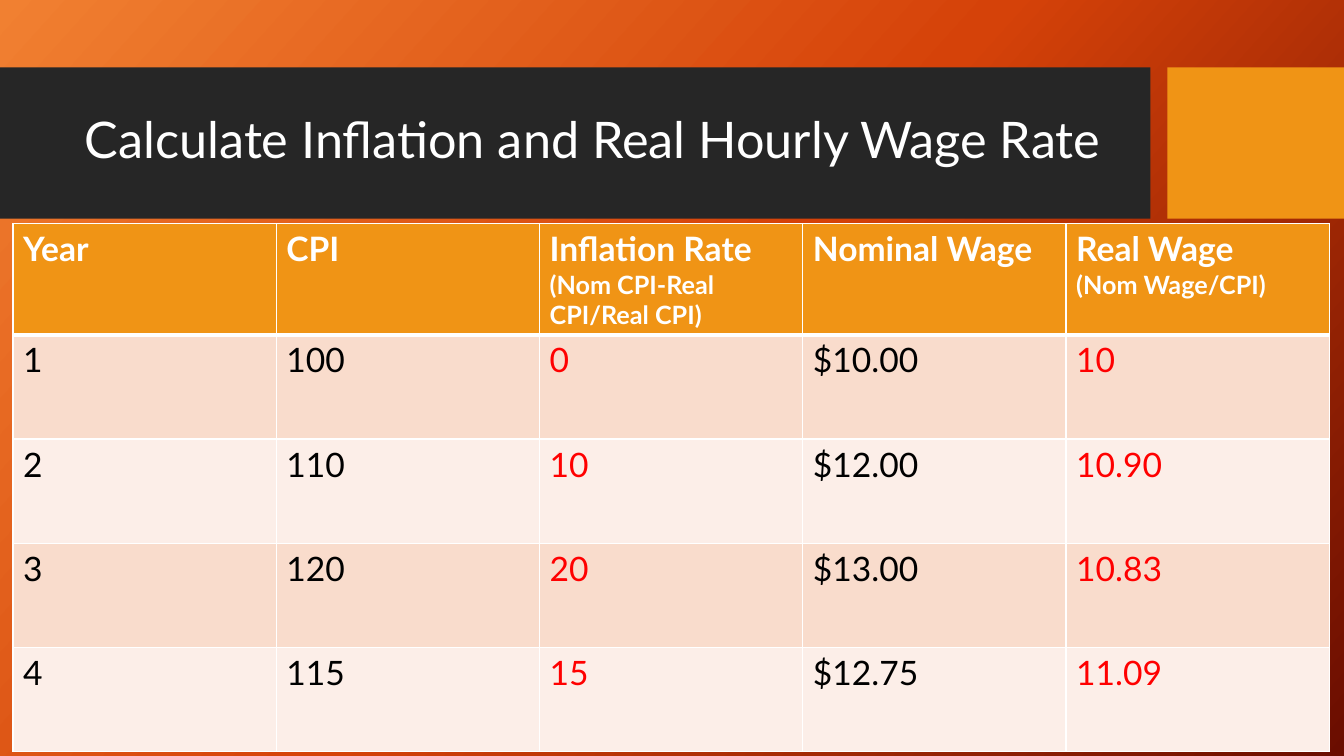
from copy import deepcopy

from lxml import etree
from pptx import Presentation
from pptx import util as u
from pptx.dml.color import RGBColor
from pptx.enum import shapes, text
from pptx.oxml import ns

COLORS = {
    "glow": "F18031", "flame": "D54209", "ember": "6A0D00",
    "banner": "262626", "accent": "F09415", "white": "FFFFFF",
    "black": "000000", "answer": "FF0000", "band": "F9DCCC", "pale": "FCEEE8",
}
HEADERS = [
    [[("Year", 24)]],
    [[("CPI", 24)]],
    [[("Inflation Rate ", 24), ("(Nom CPI-Real CPI/Real CPI)", 18)]],
    [[("Nominal Wage", 24)]],
    [[("Real Wage", 24)], [("(Nom Wage/CPI)", 18)]],
]
WAGES = [
    ["1", "100", "0", "$10.00", "10"],
    ["2", "110", "10", "$12.00", "10.90"],
    ["3", "120", "20", "$13.00", "10.83"],
    ["4", "115", "15", "$12.75", "11.09"],
]
ANSWER_COLUMNS = (2, 4)


def color(name):
    """Return the named colour."""
    return RGBColor.from_string(COLORS[name])


def write_text(frame, paragraphs, fill="black", bold=False, spacing=1.0):
    """Write paragraphs given as lists of (text, size) runs."""
    frame.word_wrap = True
    for index, runs in enumerate(paragraphs):
        paragraph = frame.add_paragraph() if index else frame.paragraphs[0]
        paragraph.alignment = text.PP_ALIGN.LEFT
        paragraph.line_spacing = spacing
        for words, size in runs:
            run = paragraph.add_run()
            run.text = words
            run.font.name = "Lato"
            run.font.size = u.Pt(size)
            run.font.bold = bold
            run.font.color.rgb = color(fill)


def paint_background(slide):
    """Fill the slide with a three-stop diagonal gradient."""
    fill = slide.background.fill
    fill.gradient()
    fill.gradient_angle = 360 - 42
    stop_list = slide.element.find(".//" + ns.qn("a:gsLst"))
    stop_list.append(deepcopy(stop_list[-1]))
    for stop, name, position in zip(fill.gradient_stops, ("glow", "flame", "ember"), (0, 0.5, 1)):
        stop.color.rgb = color(name)
        stop.position = position


def add_block(slide, left, top, width, height, fill):
    """Add a plain filled rectangle."""
    block = slide.shapes.add_shape(shapes.MSO_SHAPE.RECTANGLE, left, top, width, height)
    block.shadow.inherit = False
    block.fill.solid()
    block.fill.fore_color.rgb = color(fill)
    block.line.fill.background()


def add_banner(slide, left, top, width, height):
    """Place the dark title bar and the accent block beside it."""
    accent_width, gap = u.Cm(4.45), u.Cm(0.43)
    bar_width = width - accent_width - gap
    add_block(slide, left, top, bar_width, height, "banner")
    add_block(slide, left + bar_width + gap, top, accent_width, height, "accent")
    title = slide.shapes.title
    slide.shapes.element.append(title.element)
    title.left, title.top = left + u.Cm(1.88), top + u.Cm(0.38)
    title.width, title.height = u.Cm(26.7), u.Cm(3)
    title.text_frame.vertical_anchor = text.MSO_ANCHOR.MIDDLE
    write_text(title.text_frame, [[("Calculate Inflation and Real Hourly Wage Rate", 36)]],
               fill="white", spacing=0.9)


def format_cell(cell, fill, top=1, bottom=1):
    """Set the white borders and the fill of a cell."""
    properties = cell._tc.get_or_add_tcPr()
    for side, points in zip("LRTB", (1, 1, top, bottom)):
        line = etree.SubElement(properties, ns.qn("a:ln" + side), w=str(u.Pt(points)))
        solid = etree.SubElement(line, ns.qn("a:solidFill"))
        etree.SubElement(solid, ns.qn("a:srgbClr"), val=COLORS["white"])
    cell.fill.solid()
    cell.fill.fore_color.rgb = color(fill)


def add_wage_table(slide, left, top, width, height):
    """Place the table of price index, inflation and wages."""
    table = slide.shapes.add_table(len(WAGES) + 1, len(HEADERS), left, top, width, height).table
    header_height = u.Cm(2.72)
    for column in table.columns:
        column.width = width // len(HEADERS)
    for row in table.rows:
        row.height = (height - header_height) // len(WAGES)
    table.rows[0].height = header_height
    for column, header in enumerate(HEADERS):
        cell = table.cell(0, column)
        format_cell(cell, "accent", bottom=3)
        write_text(cell.text_frame, header, fill="white", bold=True)
    for row, values in enumerate(WAGES, 1):
        for column, value in enumerate(values):
            cell = table.cell(row, column)
            format_cell(cell, "band" if row % 2 else "pale", top=3 if row == 1 else 1)
            write_text(cell.text_frame, [[(value, 24)]],
                       fill="answer" if column in ANSWER_COLUMNS else "black")


def main():
    """Build and save the presentation."""
    presentation = Presentation()
    presentation.slide_width, presentation.slide_height = u.Cm(33.87), u.Cm(19.05)
    slide = presentation.slides.add_slide(presentation.slide_layouts[5])
    paint_background(slide)
    add_banner(slide, 0, u.Cm(1.7), presentation.slide_width, u.Cm(3.81))
    add_wage_table(slide, u.Cm(0.33), u.Cm(5.64), u.Cm(33.17), u.Cm(13.23))
    presentation.save("out.pptx")


if __name__ == "__main__":
    main()
